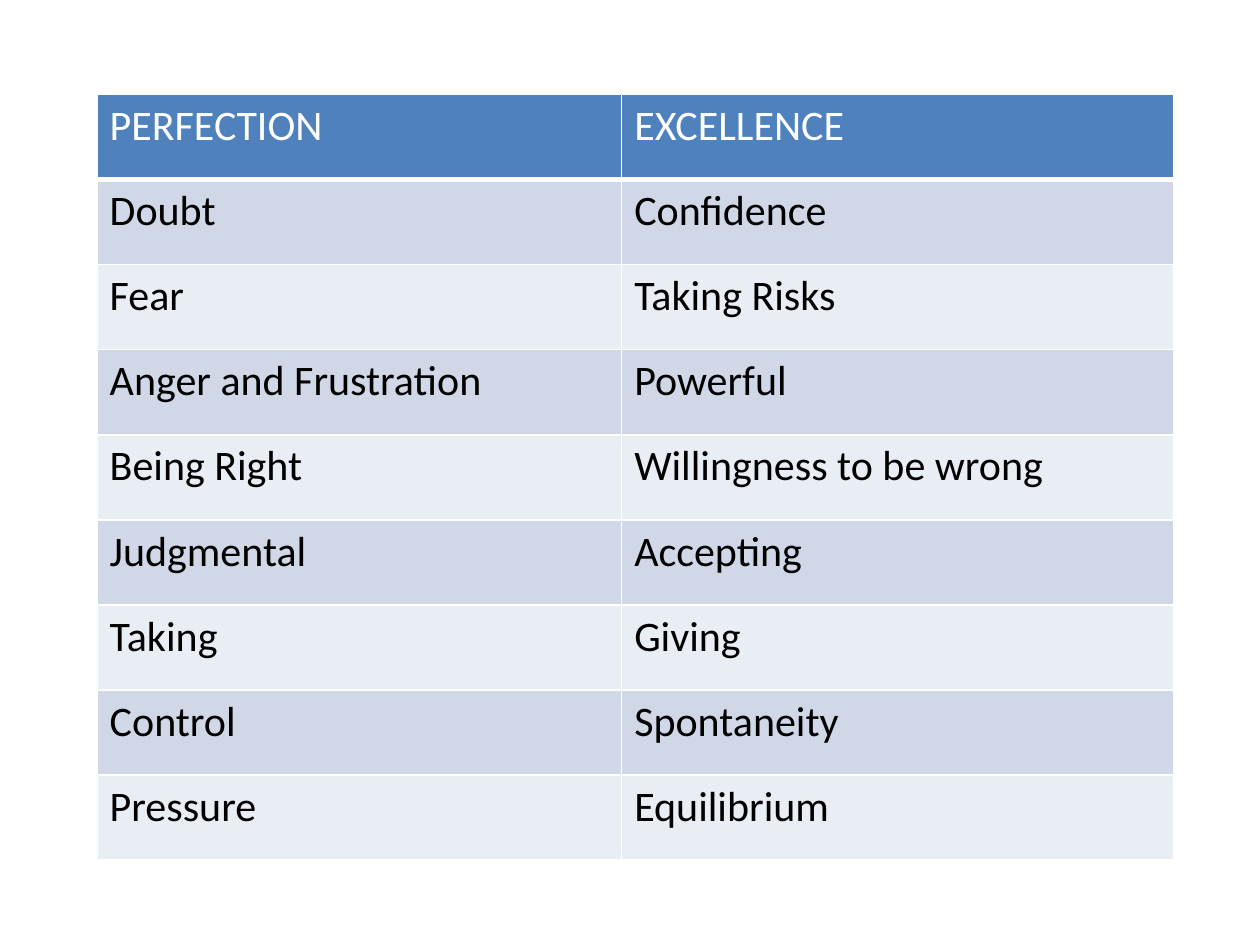
"""Build a slide with a table contrasting perfection and excellence."""
from lxml import etree
from pptx import Presentation
from pptx import util as u
from pptx.dml.color import RGBColor
from pptx.oxml import ns

ROWS = [
    ("PERFECTION", "EXCELLENCE"),
    ("Doubt", "Confidence"),
    ("Fear", "Taking Risks"),
    ("Anger and Frustration", "Powerful"),
    ("Being Right", "Willingness to be wrong"),
    ("Judgmental", "Accepting"),
    ("Taking", "Giving"),
    ("Control", "Spontaneity"),
    ("Pressure", "Equilibrium"),
]
LEFT, TOP = 55.5, 54
COLUMN_WIDTHS = (299.75, 315.5)
ROW_HEIGHT = 48.64
HEADER_FILL, BAND_FILLS = "4F81BD", ("E9EDF4", "D0D8E8")
WHITE, BLACK = "FFFFFF", "000000"


def color(value):
    """Return the colour for a hex string."""
    return RGBColor.from_string(value)


def add_borders(cell, bottom_width):
    """Draw white lines on the four sides of a cell."""
    properties = cell._tc.get_or_add_tcPr()
    for side, width in (("L", 1), ("R", 1), ("T", 1), ("B", bottom_width)):
        line = etree.SubElement(properties, ns.qn(f"a:ln{side}"), w=str(u.Pt(width)))
        fill = etree.SubElement(line, ns.qn("a:solidFill"))
        etree.SubElement(fill, ns.qn("a:srgbClr"), val=WHITE)


def fill_cell(cell, words, is_header, fill):
    """Write and style one cell."""
    add_borders(cell, 3 if is_header else 1)
    cell.fill.solid()
    cell.fill.fore_color.rgb = color(fill)
    cell.text = words
    font = cell.text_frame.paragraphs[0].font
    font.name, font.size, font.bold = "Calibri", u.Pt(24), False
    font.color.rgb = color(WHITE if is_header else BLACK)


def main():
    """Create and save the presentation."""
    presentation = Presentation()
    presentation.slide_width, presentation.slide_height = u.Pt(720), u.Pt(540)
    slide = presentation.slides.add_slide(presentation.slide_layouts[6])
    table = slide.shapes.add_table(
        len(ROWS), len(COLUMN_WIDTHS), u.Pt(LEFT), u.Pt(TOP),
        u.Pt(sum(COLUMN_WIDTHS)), u.Pt(ROW_HEIGHT * len(ROWS))).table
    for column, width in zip(table.columns, COLUMN_WIDTHS):
        column.width = u.Pt(width)
    for index, (row, entries) in enumerate(zip(table.rows, ROWS)):
        row.height = u.Pt(ROW_HEIGHT)
        is_header = index == 0
        fill = HEADER_FILL if is_header else BAND_FILLS[index % 2]
        for cell, words in zip(row.cells, entries):
            fill_cell(cell, words, is_header, fill)
    presentation.save("out.pptx")


if __name__ == "__main__":
    main()
